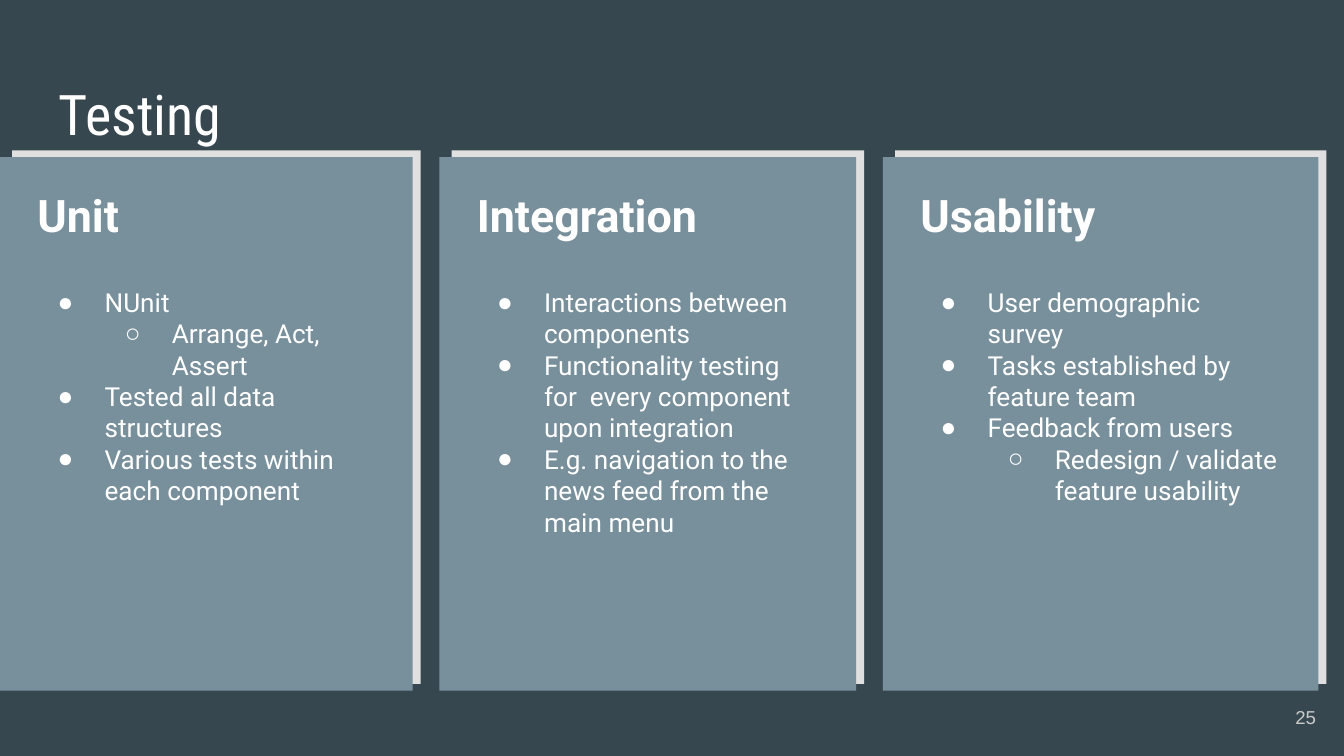
from pptx import Presentation
from pptx.dml.color import RGBColor
from pptx.enum.shapes import MSO_SHAPE
from pptx.enum.text import MSO_ANCHOR, PP_ALIGN
from pptx.oxml.ns import qn
from pptx.util import Inches, Pt
from lxml import etree

RECT = MSO_SHAPE.RECTANGLE
TOP, MIDDLE = MSO_ANCHOR.TOP, MSO_ANCHOR.MIDDLE
LEFT, RIGHT = PP_ALIGN.LEFT, PP_ALIGN.RIGHT

WHITE = RGBColor(0xFF, 0xFF, 0xFF)
SLATE = RGBColor(0x37, 0x47, 0x4F)
BLUE_GREY = RGBColor(0x78, 0x90, 0x9C)
PALE_GREY = RGBColor(0xE0, 0xE0, 0xE0)
NUMBER_GREY = RGBColor(0xCA, 0xCA, 0xCA)

SLIDE_WIDTH = 10
BULLETS = "●○"
BULLET_FONT = "Arial"
INDENT, HANGING = 0.5, 0.35
CARD_HEIGHT = 3.97

# Left edge, width, heading and (level, text) points of each card
CARDS = [
    (0, 3.07, "Unit", [
        (0, "NUnit"),
        (1, "Arrange, Act, Assert"),
        (0, "Tested all data structures"),
        (0, "Various tests within each component"),
    ]),
    (3.27, 3.1, "Integration", [
        (0, "Interactions between components"),
        (0, "Functionality testing for  every component upon integration"),
        (0, "E.g. navigation to the news feed from the main menu"),
    ]),
    (6.57, 3.24, "Usability", [
        (0, "User demographic survey"),
        (0, "Tasks established by feature team"),
        (0, "Feedback from users"),
        (1, "Redesign / validate feature usability"),
    ]),
]


class Deck:
    """Holds the body style and the current slide."""
    font, size, color = "Roboto", 14, WHITE

    def __init__(self, slide):
        self.slide = slide

    def style(self, paragraph, font=None, size=None, color=None, bold=False):
        for run in paragraph.runs:
            run.font.name = font or self.font
            run.font.size = Pt(size or self.size)
            run.font.color.rgb = color or self.color
            run.font.bold = bold

    def frame(self, shape, anchor=TOP):
        frame = shape.text_frame
        frame.word_wrap = True
        frame.vertical_anchor = anchor
        frame.margin_left = frame.margin_right = Inches(0.1)
        frame.margin_top = frame.margin_bottom = Inches(0.1)
        return frame

    def text(self, shapes, box, text, anchor=TOP, align=LEFT, **style):
        frame = self.frame(shapes.add_textbox(*map(Inches, box)), anchor)
        frame.text = text
        frame.paragraphs[0].alignment = align
        self.style(frame.paragraphs[0], **style)

    def panel(self, shapes, box, fill):
        shape = shapes.add_shape(RECT, *map(Inches, box))
        shape.shadow.inherit = False
        shape.fill.solid()
        shape.fill.fore_color.rgb = fill
        shape.line.fill.background()
        return shape

    def bullets(self, shapes, box, points):
        frame = self.frame(self.panel(shapes, box, BLUE_GREY))
        for i, (level, text) in enumerate(points):
            paragraph = frame.add_paragraph() if i else frame.paragraphs[0]
            paragraph.text = text
            paragraph.level = level
            paragraph.alignment = LEFT
            props = paragraph._p.get_or_add_pPr()
            props.set("marL", str(Inches(INDENT * (level + 1))))
            props.set("indent", str(Inches(-HANGING)))
            bullet_color = etree.SubElement(props, qn("a:buClr"))
            etree.SubElement(bullet_color, qn("a:srgbClr"), val=str(self.color))
            etree.SubElement(props, qn("a:buFont"), typeface=BULLET_FONT)
            etree.SubElement(props, qn("a:buChar"), char=BULLETS[level])
            self.style(paragraph)

    def card(self, left, width, heading, points):
        shapes = self.slide.shapes.add_group_shape().shapes
        inner_left, inner_width = left + 0.18, width - 0.36
        self.panel(shapes, (left + 0.09, 1.12, width - 0.03, CARD_HEIGHT), PALE_GREY)
        self.panel(shapes, (left, 1.17, width, CARD_HEIGHT), BLUE_GREY)
        self.bullets(shapes, (inner_left, 2.03, inner_width, 3.01), points)
        self.text(shapes, (inner_left, 1.3, inner_width, 0.66), heading,
                  size=24, bold=True)


def main():
    # Widescreen slide, 16 to 9
    presentation = Presentation()
    presentation.slide_width = Inches(SLIDE_WIDTH)
    presentation.slide_height = Inches(SLIDE_WIDTH * 9 / 16)
    slide = presentation.slides.add_slide(presentation.slide_layouts[6])
    slide.background.fill.solid()
    slide.background.fill.fore_color.rgb = SLATE
    deck = Deck(slide)

    # Title
    deck.text(slide.shapes, (0.34, 0.49, 9.32, 0.63), "Testing",
              font="Roboto Condensed", size=30)

    # Three testing cards
    for card in CARDS:
        deck.card(*card)

    # Slide number
    deck.text(slide.shapes, (9.29, 5.12, 0.6, 0.43), "25", anchor=MIDDLE,
              align=RIGHT, font="Arial", size=10, color=NUMBER_GREY)

    presentation.save("out.pptx")


if __name__ == "__main__":
    main()
